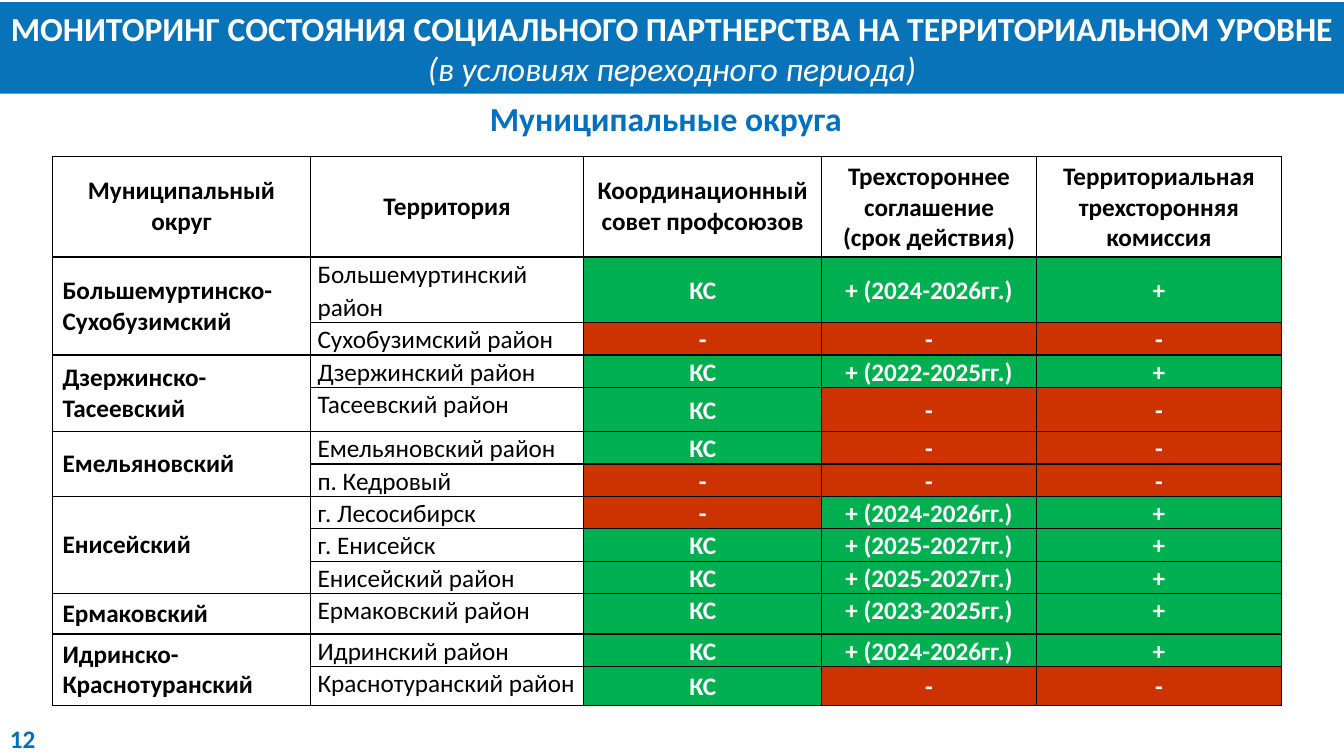
from lxml import etree
from pptx import Presentation
from pptx.dml.color import RGBColor
from pptx.enum import shapes, text
from pptx.oxml.ns import qn
from pptx.util import Inches, Pt

BLUE, BANNER, BLACK, WHITE = "0070C0", "0973BA", "000000", "FFFFFF"
GREEN, RED = "00B050", "CC3300"
CENTER = text.PP_ALIGN.CENTER
TOP, MIDDLE = text.MSO_ANCHOR.TOP, text.MSO_ANCHOR.MIDDLE

TITLE = "МОНИТОРИНГ СОСТОЯНИЯ СОЦИАЛЬНОГО ПАРТНЕРСТВА НА ТЕРРИТОРИАЛЬНОМ УРОВНЕ "
TITLE_NOTE = "(в условиях переходного периода)"
SUBTITLE = "Муниципальные округа"
PAGE = "12"

HEADINGS = [
    "Муниципальный округ",
    "Территория",
    "Координационный совет профсоюзов",
    "Трехстороннее соглашение\v(срок действия)",
    "Территориальная трехсторонняя комиссия",
]
# district: [(row height, territory, council, agreement, commission)]
DISTRICTS = {
    "Большемуртинско-Сухобузимский": [
        (0.65, "Большемуртинский район", "КС", "+ (2024-2026гг.)", "+"),
        (0.32, "Сухобузимский район", "-", "-", "-"),
    ],
    "Дзержинско-Тасеевский": [
        (0.32, "Дзержинский район", "КС", "+ (2022-2025гг.)", "+"),
        (0.44, "Тасеевский район", "КС", "-", "-"),
    ],
    "Емельяновский": [
        (0.32, "Емельяновский район", "КС", "-", "-"),
        (0.32, "п. Кедровый", "-", "-", "-"),
    ],
    "Енисейский": [
        (0.32, "г. Лесосибирск", "-", "+ (2024-2026гг.)", "+"),
        (0.32, "г. Енисейск", "КС", "+ (2025-2027гг.)", "+"),
        (0.32, "Енисейский район", "КС", "+ (2025-2027гг.)", "+"),
    ],
    "Ермаковский": [
        (0.4, "Ермаковский район", "КС", "+ (2023-2025гг.)", "+"),
    ],
    "Идринско-Краснотуранский": [
        (0.32, "Идринский район", "КС", "+ (2024-2026гг.)", "+"),
        (0.39, "Краснотуранский район", "КС", "-", "-"),
    ],
}
COLUMN_WIDTHS = [2.56, 2.71, 2.36, 2.13, 2.43]
HEADING_HEIGHT = 1.0
TABLE_LEFT, TABLE_TOP = 0.52, 1.55
TIGHT = {"margin_left": Inches(0.07), "margin_right": Inches(0.07),
         "margin_top": 0, "margin_bottom": 0}
TERRITORY_SPACING = {"line_spacing": 1.07, "space_after": Pt(8)}


def rgb(color):
    return RGBColor.from_string(color)


def apply(target, formats):
    for name, value in formats.items():
        setattr(target, name, value)


def add_run(paragraph, words, size, color, **formats):
    run = paragraph.add_run()
    run.text = words
    apply(run.font, {"name": "Calibri", "size": Pt(size), **formats})
    run.font.color.rgb = rgb(color)


def add_label(slide, box, words, size, wrap):
    frame = slide.shapes.add_textbox(*map(Inches, box)).text_frame
    frame.word_wrap = wrap
    add_run(frame.paragraphs[0], words, size, BLUE, bold=True)


def add_borders(cell):
    properties = cell._tc.get_or_add_tcPr()
    for position, side in enumerate(("lnL", "lnR", "lnT", "lnB")):
        line = etree.Element(qn(f"a:{side}"), w=str(Pt(1)))
        fill = etree.SubElement(line, qn("a:solidFill"))
        etree.SubElement(fill, qn("a:srgbClr"), val=BLACK)
        properties.insert(position, line)


def fill_cell(cell, words, color=BLACK, fill=WHITE, bold=True, align=None,
              anchor=MIDDLE, margins=None, spacing=None):
    apply(cell, {"vertical_anchor": anchor, **(margins or {})})
    cell.fill.solid()
    cell.fill.fore_color.rgb = rgb(fill)
    paragraph = cell.text_frame.paragraphs[0]
    apply(paragraph, {"alignment": align, **(spacing or {})})
    for number, part in enumerate(words.split("\v")):
        if number:
            paragraph.add_line_break()
        add_run(paragraph, part, 18, color, bold=bold)


def add_monitoring(slide):
    heights = [HEADING_HEIGHT] + [row[0] for rows in DISTRICTS.values() for row in rows]
    table = slide.shapes.add_table(
        len(heights), len(HEADINGS), Inches(TABLE_LEFT), Inches(TABLE_TOP),
        Inches(sum(COLUMN_WIDTHS)), Inches(sum(heights))).table
    apply(table, {"first_row": False, "horz_banding": False})
    for column, width in zip(table.columns, COLUMN_WIDTHS):
        column.width = Inches(width)
    for row, height in zip(table.rows, heights):
        row.height = Inches(height)

    for column, heading in enumerate(HEADINGS):
        fill_cell(table.cell(0, column), heading, align=CENTER)

    tight = {"margins": TIGHT, "spacing": TERRITORY_SPACING}
    first = 1
    for district, territories in DISTRICTS.items():
        last = first + len(territories) - 1
        fill_cell(table.cell(first, 0), district)
        if last > first:
            table.cell(first, 0).merge(table.cell(last, 0))
        status_anchor = MIDDLE if last > first else TOP
        for row, (_, territory, *statuses) in enumerate(territories, first):
            fill_cell(table.cell(row, 1), territory, bold=False, anchor=TOP, **tight)
            for column, status in enumerate(statuses, 2):
                fill_cell(table.cell(row, column), status, WHITE,
                          RED if status == "-" else GREEN,
                          align=CENTER, anchor=status_anchor, **tight)
        first = last + 1

    for cell in table.iter_cells():
        add_borders(cell)


def add_banner(slide):
    banner = slide.shapes.add_shape(
        shapes.MSO_SHAPE.RECTANGLE, *map(Inches, (0, 0.02, 13.33, 0.91)))
    banner.shadow.inherit = False
    banner.fill.solid()
    banner.fill.fore_color.rgb = rgb(BANNER)
    banner.line.fill.background()
    banner.text_frame.word_wrap = True
    title = banner.text_frame.paragraphs[0]
    title.alignment = CENTER
    add_run(title, TITLE, 24, WHITE, bold=True)
    add_run(title, TITLE_NOTE, 24, WHITE, italic=True)


def main():
    deck = Presentation()
    apply(deck, {"slide_width": Inches(13.33), "slide_height": Inches(7.5)})
    slide = deck.slides.add_slide(deck.slide_layouts[6])
    add_label(slide, (0, 7.13, 0.52, 0.4), PAGE, 18, True)
    add_monitoring(slide)
    add_label(slide, (4.76, 0.92, 3.81, 0.5), SUBTITLE, 24, False)
    add_banner(slide)
    deck.save("out.pptx")


if __name__ == "__main__":
    main()
